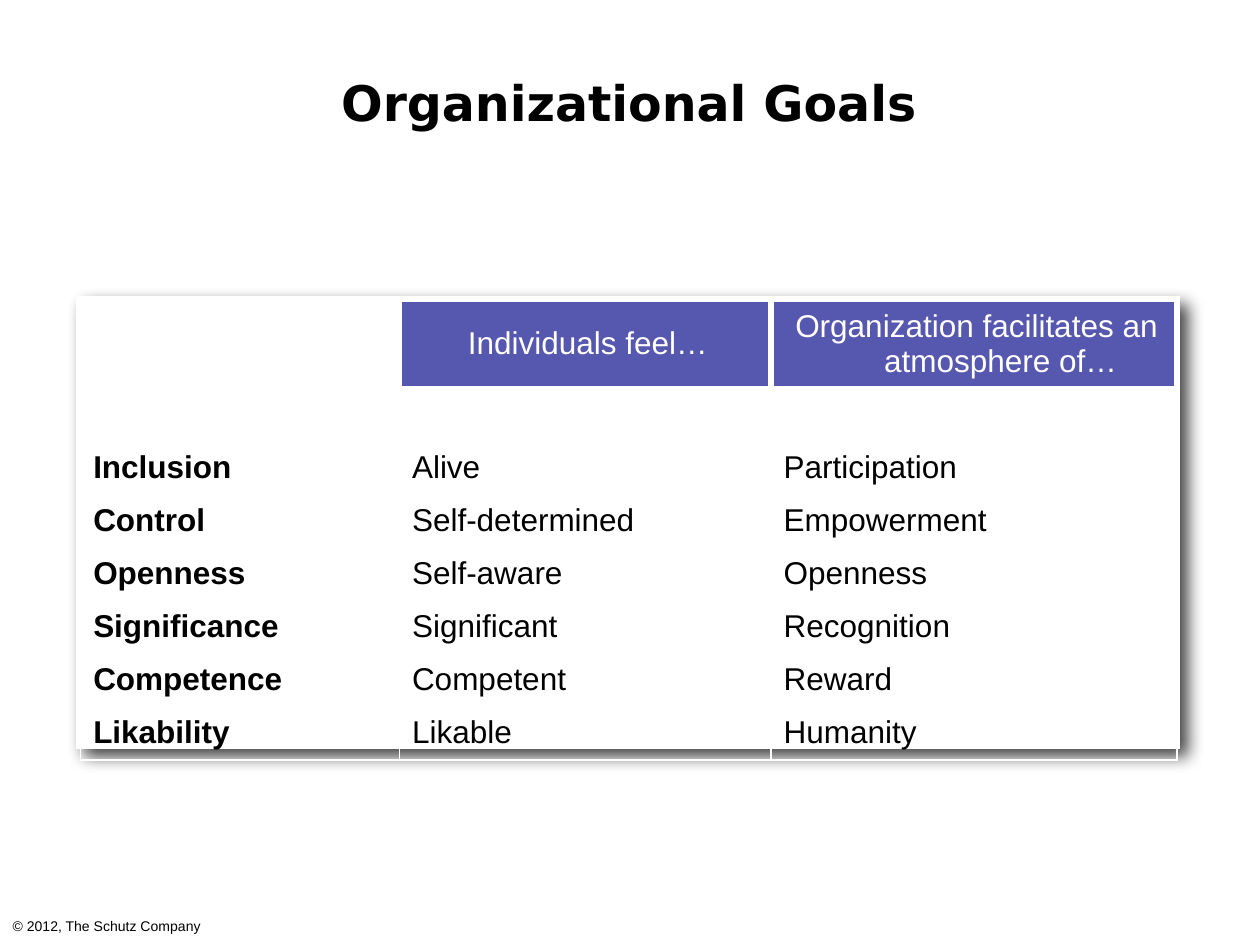
import pptx
import pptx.util
import pptx.dml.color
import pptx.enum.shapes
import pptx.enum.text
import pptx.oxml
import pptx.oxml.ns

Inches = pptx.util.Inches
Pt = pptx.util.Pt
PP_ALIGN = pptx.enum.text.PP_ALIGN
ANCHOR = pptx.enum.text.MSO_ANCHOR

BLACK = pptx.dml.color.RGBColor(0x00, 0x00, 0x00)
WHITE = pptx.dml.color.RGBColor(0xFF, 0xFF, 0xFF)
VIOLET = pptx.dml.color.RGBColor(0x56, 0x57, 0xAE)

INSET = Inches(0.06)
COLUMN_WIDTHS = [2.53, 2.95, 3.22]
HEADER_HEIGHT, ROW_HEIGHT = 0.7, 0.41
GOALS = [
    ("", "Individuals feel…", "Organization facilitates an atmosphere of…"),
    ("", "", ""),
    ("Inclusion", "Alive", "Participation"),
    ("Control", "Self-determined", "Empowerment"),
    ("Openness", "Self-aware", "Openness"),
    ("Significance", "Significant", "Recognition"),
    ("Competence", "Competent", "Reward"),
    ("Likability", "Likable", "Humanity"),
]
BORDER_SIDES = {0: "LRTB", 1: "TB", 2: "T"}


def style_paragraph(paragraph, size, color, font="Arial", bold=False,
                    align=PP_ALIGN.LEFT, margin=0.04, indent=0):
    """Set indents, alignment and font of a paragraph."""
    properties = paragraph._p.get_or_add_pPr()
    properties.set("marL", str(Inches(margin)))
    properties.set("indent", str(Inches(indent)))
    paragraph.alignment = align
    paragraph.font.name = font
    paragraph.font.size = Pt(size)
    paragraph.font.bold = bold
    paragraph.font.color.rgb = color


def add_label(slide, text, box, size, **style):
    """Add a one-line text box."""
    frame = slide.shapes.add_textbox(*map(Inches, box)).text_frame
    frame.word_wrap = True
    frame.auto_size = pptx.enum.text.MSO_AUTO_SIZE.SHAPE_TO_FIT_TEXT
    frame.vertical_anchor = ANCHOR.MIDDLE
    frame.margin_left = frame.margin_right = INSET
    frame.margin_top = frame.margin_bottom = INSET
    frame.text = text
    style_paragraph(frame.paragraphs[0], size, BLACK, **style)


def add_card(slide, box):
    """Add the white panel with a soft shadow to the lower right."""
    card = slide.shapes.add_shape(
        pptx.enum.shapes.MSO_SHAPE.RECTANGLE, *map(Inches, box))
    card.fill.solid()
    card.fill.fore_color.rgb = WHITE
    card.line.color.rgb = WHITE
    card.line.width = Pt(0.75)
    card.shadow.inherit = False
    effects = card._element.spPr.find(pptx.oxml.ns.qn("a:effectLst"))
    effects.append(pptx.oxml.parse_xml(
        f'<a:outerShdw {pptx.oxml.ns.nsdecls("a")} blurRad="{Pt(10)}" '
        f'dist="{Pt(6)}" dir="2700000" algn="tl" rotWithShape="0">'
        f'<a:srgbClr val="{BLACK}"><a:alpha val="75000"/></a:srgbClr>'
        '</a:outerShdw>'))


def add_borders(cell, sides):
    """Draw white borders on the given sides of a cell."""
    properties = cell._tc.get_or_add_tcPr()
    for position, side in enumerate(sides):
        properties.insert(position, pptx.oxml.parse_xml(
            f'<a:ln{side} {pptx.oxml.ns.nsdecls("a")} w="{Pt(4)}"><a:solidFill>'
            f'<a:srgbClr val="{WHITE}"/></a:solidFill></a:ln{side}>'))


def fill_cell(cell, text, row, column):
    """Write and style one cell by its place in the table."""
    is_header = row == 0
    cell.margin_left = cell.margin_right = INSET
    cell.margin_top = cell.margin_bottom = INSET
    cell.vertical_anchor = ANCHOR.MIDDLE if is_header else ANCHOR.TOP
    if is_header and text:
        cell.fill.solid()
        cell.fill.fore_color.rgb = VIOLET
    else:
        cell.fill.background()
    add_borders(cell, BORDER_SIDES.get(row, ""))
    cell.text = text
    paragraph = cell.text_frame.paragraphs[0]
    paragraph.level = 1
    style_paragraph(paragraph, 18, WHITE if is_header else BLACK,
                    bold=column == 0, margin=0.42, indent=-0.38,
                    align=PP_ALIGN.CENTER if is_header else PP_ALIGN.LEFT)


def add_goal_table(slide, left, top):
    """Add the table of goals."""
    heights = [HEADER_HEIGHT] + [ROW_HEIGHT] * (len(GOALS) - 1)
    table = slide.shapes.add_table(
        len(GOALS), len(COLUMN_WIDTHS), Inches(left), Inches(top),
        Inches(sum(COLUMN_WIDTHS)), Inches(sum(heights))).table
    table.first_row = table.horz_banding = False
    for column, width in zip(table.columns, COLUMN_WIDTHS):
        column.width = Inches(width)
    for row, height in zip(table.rows, heights):
        row.height = Inches(height)
    for row, goal in enumerate(GOALS):
        for column, text in enumerate(goal):
            fill_cell(table.cell(row, column), text, row, column)


def main():
    """Build the slide and save it."""
    deck = pptx.Presentation()
    deck.slide_width, deck.slide_height = Inches(10), Inches(7.5)
    slide = deck.slides.add_slide(deck.slide_layouts[6])
    add_card(slide, (0.61, 2.36, 8.75, 3.58))
    add_label(slide, "© 2012, The Schutz Company", (0, 7.23, 3.18, 0.24), 8)
    add_label(slide, "Organizational Goals", (0.01, 0.52, 9.92, 0.58), 28,
              font="DejaVu Sans", bold=True, align=PP_ALIGN.CENTER)
    add_goal_table(slide, 0.64, 2.37)
    deck.save("out.pptx")


if __name__ == "__main__":
    main()
